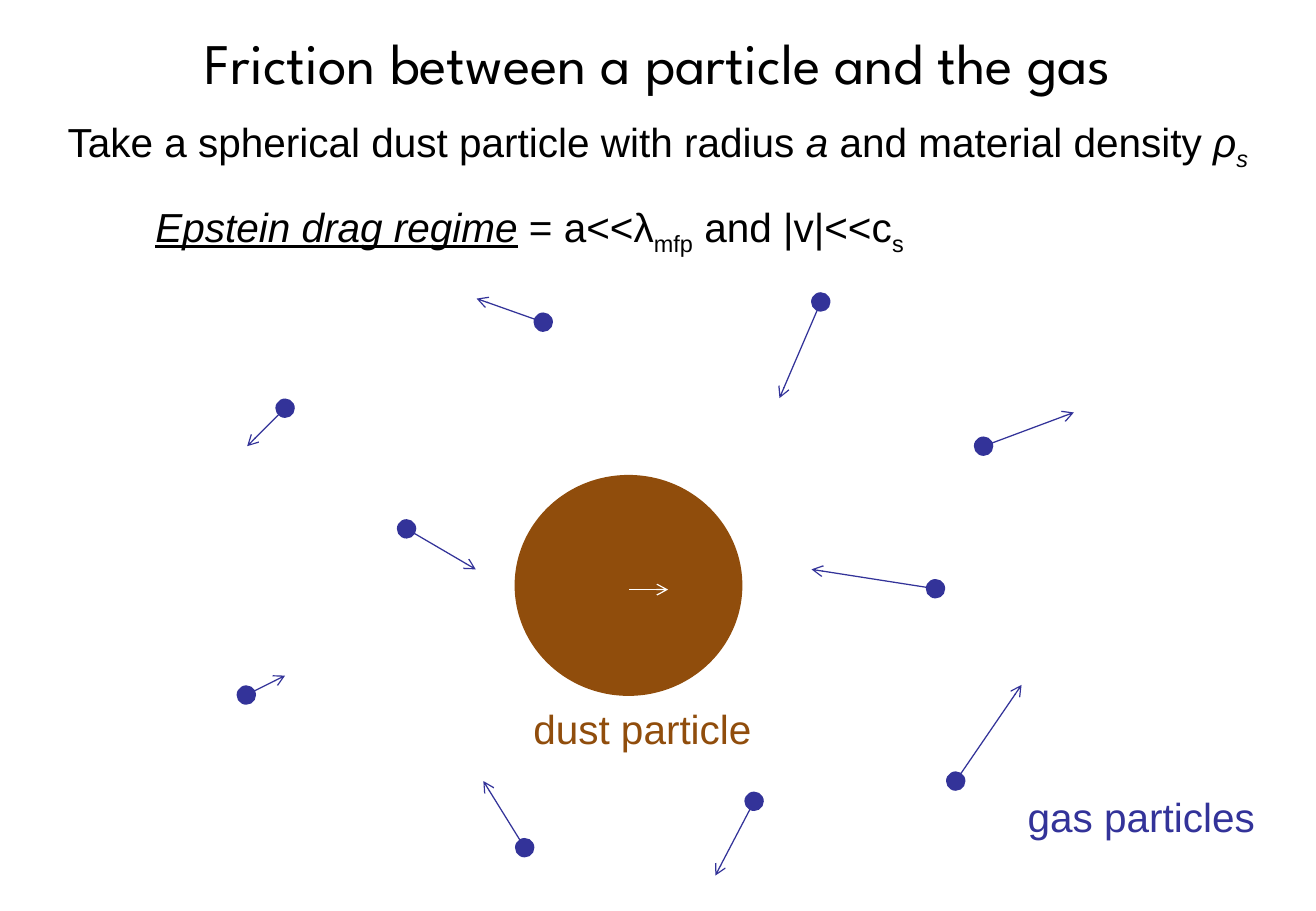
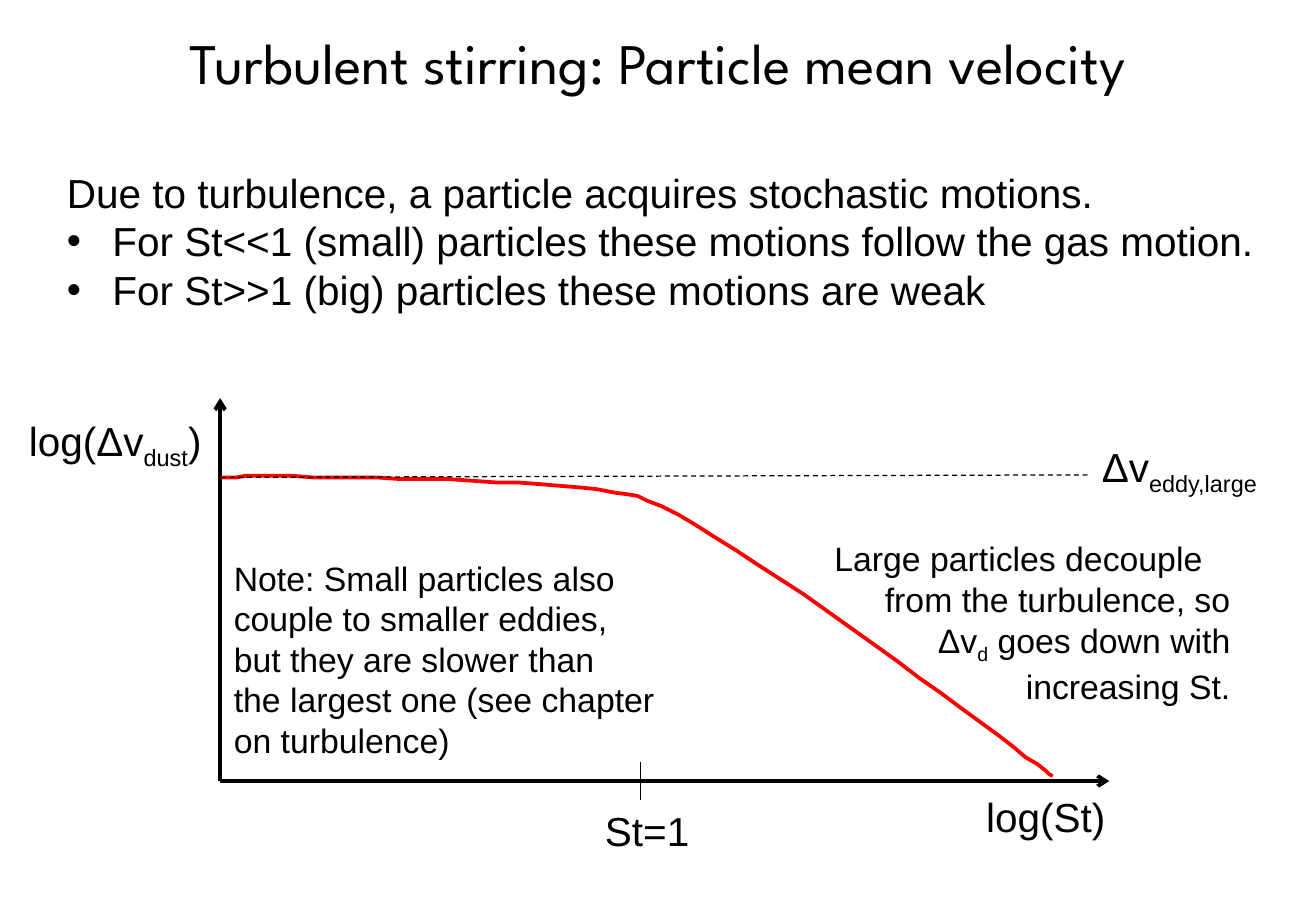
import lxml.etree
import pptx
import pptx.dml.color
import pptx.enum.dml
import pptx.enum.shapes
import pptx.enum.text
import pptx.oxml.ns
import pptx.util

Pt = pptx.util.Pt
RGBColor = pptx.dml.color.RGBColor
Align = pptx.enum.text.PP_ALIGN
AutoSize = pptx.enum.text.MSO_AUTO_SIZE
qn = pptx.oxml.ns.qn

BLACK = RGBColor(0x00, 0x00, 0x00)
WHITE = RGBColor(0xFF, 0xFF, 0xFF)
GAS = RGBColor(0x33, 0x33, 0x99)
DUST = RGBColor(0x90, 0x4D, 0x0C)
CURVE = RGBColor(0xFF, 0x00, 0x00)


class Deck:
    """Shared style plus the slide being built; all lengths are in points."""

    TITLE_FONT, BODY_FONT = "League Spartan", "Arial"
    TITLE_BOX = (26, 12, 728, 48.5)
    INDENT = 27

    def __init__(self):
        self.prs = pptx.Presentation()
        self.prs.slide_width, self.prs.slide_height = Pt(780), Pt(540)
        self.s = None

    def slide(self, title):
        self.s = self.prs.slides.add_slide(self.prs.slide_layouts[5])
        sp = self.s.shapes.title
        sp.left, sp.top, sp.width, sp.height = map(Pt, self.TITLE_BOX)
        tf = sp.text_frame
        tf.text = title
        tf.auto_size = AutoSize.NONE
        tf.vertical_anchor = pptx.enum.text.MSO_ANCHOR.MIDDLE
        p = tf.paragraphs[0]
        p.alignment = Align.CENTER
        self.font(p, 34, BLACK, self.TITLE_FONT)

    def font(self, p, size, color, name):
        p.font.name, p.font.size = name, Pt(size)
        p.font.color.rgb = color

    def text(self, x, y, w, h, *paras, size=24, color=BLACK, wrap=False):
        """Each paragraph is a list of (text, marks): i italic, u underline, _ subscript."""
        sp = self.s.shapes.add_textbox(Pt(x), Pt(y), Pt(w), Pt(h))
        tf = sp.text_frame
        tf.word_wrap = wrap
        tf.auto_size = AutoSize.SHAPE_TO_FIT_TEXT
        for i, runs in enumerate(paras):
            p = tf.add_paragraph() if i else tf.paragraphs[0]
            self.font(p, size, color, self.BODY_FONT)
            for words, marks in [(runs, "")] if isinstance(runs, str) else runs:
                r = p.add_run()
                r.text = words
                if "i" in marks:
                    r.font.italic = True
                if "u" in marks:
                    r.font.underline = True
                if "_" in marks:
                    r._r.get_or_add_rPr().set("baseline", "-25000")
        return tf

    def bullet(self, p):
        pPr = p._p.get_or_add_pPr()
        pPr.set("marL", str(Pt(self.INDENT)))
        pPr.set("indent", str(-Pt(self.INDENT)))
        font = lxml.etree.Element(qn("a:buFont"), typeface=self.BODY_FONT)
        char = lxml.etree.Element(qn("a:buChar"), char="•")
        pPr.insert(0, font)
        pPr.insert(1, char)

    def ellipse(self, cx, cy, w, h, color):
        sp = self.s.shapes.add_shape(pptx.enum.shapes.MSO_SHAPE.OVAL,
                                     Pt(cx - w / 2), Pt(cy - h / 2), Pt(w), Pt(h))
        sp.shadow.inherit = False
        sp.fill.solid()
        sp.fill.fore_color.rgb = color
        sp.line.fill.background()

    def line(self, x1, y1, x2, y2, color=BLACK, width=0.75, arrow=False, dash=False):
        c = self.s.shapes.add_connector(pptx.enum.shapes.MSO_CONNECTOR.STRAIGHT,
                                        Pt(x1), Pt(y1), Pt(x2), Pt(y2))
        c.line.color.rgb = color
        c.line.width = Pt(width)
        if dash:
            c.line.dash_style = pptx.enum.dml.MSO_LINE.DASH
        if arrow:
            ln = c.line._get_or_add_ln()
            lxml.etree.SubElement(ln, qn("a:tailEnd"), type="arrow")
        lxml.etree.SubElement(c._element.spPr, qn("a:effectLst"))

    def curve(self, start, beziers, color, width, steps=24):
        """Smooth open outline through cubic segments (control, control, end)."""
        points, p0 = [], start
        for p1, p2, p3 in beziers:
            for k in range(1, steps + 1):
                t = k / steps
                u = 1 - t
                points.append(tuple(
                    u**3 * a + 3 * u * u * t * b + 3 * u * t * t * c + t**3 * d
                    for a, b, c, d in zip(p0, p1, p2, p3)))
            p0 = p3
        fb = self.s.shapes.build_freeform(*start, scale=Pt(1))
        fb.add_line_segments(points, close=False)
        sp = fb.convert_to_shape()
        sp.shadow.inherit = False
        sp.fill.background()
        sp.line.color.rgb = color
        sp.line.width = Pt(width)


def friction(d):
    d.slide("Friction between a particle and the gas")
    d.text(33, 66, 725, 36,
           [("Take a spherical dust particle with radius ", ""), ("a", "i"),
            (" and material density ", ""), ("ρ", "i"), ("s", "i_")])
    d.text(85, 116, 469.5, 36,
           [("Epstein drag regime", "iu"), (" = a<<λ", ""), ("mfp", "_"),
            (" and |v|<<c", ""), ("s", "_")])

    # Dust particle with its velocity
    d.ellipse(372.5, 347, 135, 131, DUST)
    d.line(373, 349.5, 396, 349.5, WHITE, arrow=True)
    d.text(309, 414, 145.5, 36, "dust particle", color=DUST)

    # Gas particles: centre, then tip of the velocity arrow
    for x, y, tip_x, tip_y in [
            (169, 242, 146.5, 264.5), (146, 412, 169, 400.5),
            (322, 191, 282.5, 177), (554.5, 349, 481, 337.5),
            (311, 502.5, 286.5, 463), (486.5, 179, 462, 236),
            (241, 313.5, 282, 337.5), (583, 264.5, 636.5, 244.5),
            (566.5, 463, 605.5, 406), (447, 475, 424, 519)]:
        d.ellipse(x, y, 11.5, 11.5, GAS)
        d.line(x, y, tip_x, tip_y, GAS, arrow=True)
    d.text(602, 466, 150.5, 36, "gas particles", color=GAS)


def stirring(d):
    d.slide("Turbulent stirring: Particle mean velocity")
    tf = d.text(32.5, 96, 722, 94.5,
                "Due to turbulence, a particle acquires stochastic motions.",
                "For St<<1 (small) particles these motions follow the gas motion.",
                "For St>>1 (big) particles these motions are weak")
    for p in tf.paragraphs[1:]:
        d.bullet(p)

    # Axes and the St=1 mark
    x0, y0, mark = 130.5, 463, 379.5
    d.line(x0, y0, x0, 236, width=2.25, arrow=True)
    d.line(x0, y0, 657.5, y0, width=2.25, arrow=True)
    d.line(mark, y0 - 11.5, mark, y0 + 11)
    d.text(10, 243, 121.5, 36, [("log(Δv", ""), ("dust", "_"), (")", "")])
    d.text(577.5, 466, 85.5, 36, "log(St)")
    d.text(351.5, 474, 65, 36, "St=1")

    # Velocity curve and the large-eddy level
    d.curve((131, 283), [((130.5, 281.5), (332.5, 282), (378, 294.5)),
                         ((423.5, 307), (623.5, 460), (623.5, 460))], CURVE, 2.25)
    d.line(131, 283, 646, 281.5, dash=True)
    d.text(646, 258.5, 118, 36, [("Δv", ""), ("eddy,large", "_")])

    # Remarks
    d.text(131.5, 327, 266, 128,
           "Note: Small particles also", "couple to smaller eddies,",
           "but they are slower than", "the largest one (see chapter",
           "on turbulence)", size=20)
    tf = d.text(487.5, 315.5, 249, 104.5, "Large particles decouple",
                [("from the turbulence, so Δv", ""), ("d", "_"),
                 (" goes down with increasing St.", "")], size=20, wrap=True)
    tf.paragraphs[1].alignment = Align.RIGHT


def main():
    d = Deck()
    friction(d)
    stirring(d)
    d.prs.save("out.pptx")


if __name__ == "__main__":
    main()
